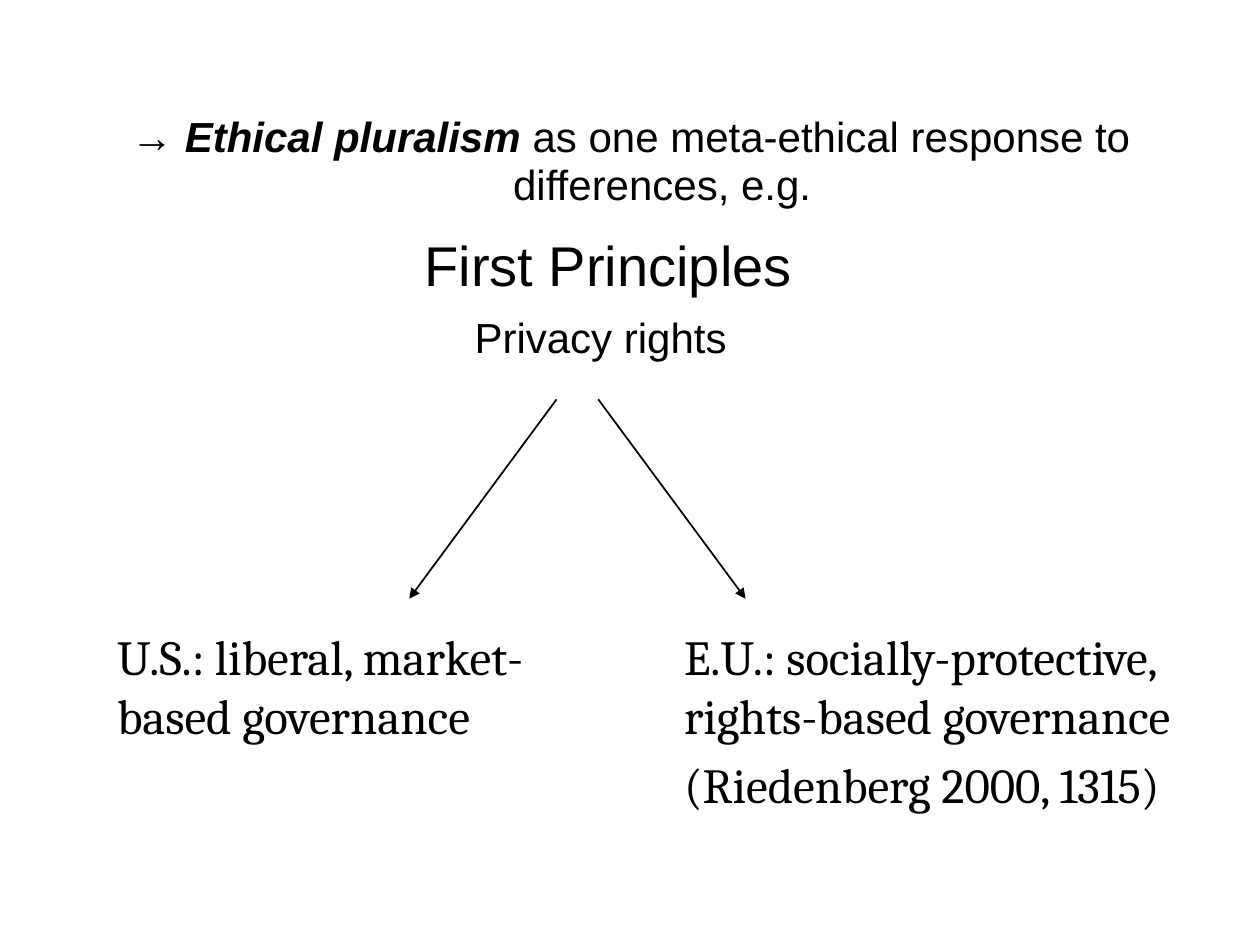
"""Build a slide on ethical pluralism and privacy rights."""
import pptx
import pptx.dml.color
import pptx.enum.dml
import pptx.enum.shapes
import pptx.enum.text
import pptx.oxml
import pptx.oxml.ns
import pptx.util

Cm, Pt = pptx.util.Cm, pptx.util.Pt
KIND = pptx.enum.shapes
ALIGN = pptx.enum.text.PP_ALIGN
HUES = {"ink": "000000", "edge": "FFFFFF"}

HEAD = {"name": "Arial", "size": Pt(24)}
BIG = {"name": "Arial", "size": Pt(32)}
BODY = {"name": "Cambria", "size": Pt(28)}
MID = {"alignment": ALIGN.CENTER}
LEFT = {"alignment": ALIGN.LEFT}
NEXT = {**LEFT, "space_before": Pt(6)}

BOXES = [
    {"at": (6.45, 4.52, 11.63, 3), "edge": False, "hang": (0, 0), "paras": [
        (MID, [("First Principles", BIG), ("\n", BIG),
               ("Privacy rights", HEAD), (" ", BIG)])]},
    {"at": (12.27, 12.5, 12.07, 5.16), "edge": True, "hang": (1.27, 0), "paras": [
        (LEFT, [("E.U.: socially-protective, rights-based governance", BODY)]),
        (NEXT, [("(Riedenberg 2000, 1315)", BODY)])]},
    {"at": (0.84, 12.5, 10.8, 2.72), "edge": True, "hang": (1.27, 0), "paras": [
        (LEFT, [("U.S.: liberal, market-based governance", BODY)])]},
    {"at": (1.07, 2.18, 23.29, 2.21), "edge": False, "hang": (1.27, -1.27), "paras": [
        ({**MID, "line_spacing": 0.95}, [
            ("→ ", {**HEAD, "bold": True}),
            ("Ethical pluralism ", {**HEAD, "bold": True, "italic": True}),
            ("as one meta-ethical response to differences, e.g.", HEAD)])]},
]
AXIS, TOP, LOW = 11.64, 8.05, 12.07
NEAR, FAR = 0.42, 3.39


def tint(name):
    return pptx.dml.color.RGBColor.from_string(HUES[name])


def apply(goal, vals):
    for key, val in vals.items():
        setattr(goal, key, val)


def write(frame, paras, hang):
    apply(frame, {"word_wrap": True,
                  "auto_size": pptx.enum.text.MSO_AUTO_SIZE.SHAPE_TO_FIT_TEXT,
                  "vertical_anchor": pptx.enum.text.MSO_ANCHOR.TOP})
    for num, (form, runs) in enumerate(paras):
        para = frame.add_paragraph() if num else frame.paragraphs[0]
        prop = para._p.get_or_add_pPr()
        for key, val in zip(("marL", "indent"), hang):
            prop.set(key, str(int(Cm(val))))
        apply(para, form)
        for text, font in runs:
            if text == "\n":
                para.add_line_break()
                continue
            run = para.add_run()
            run.text = text
            apply(run.font, font)
            run.font.color.rgb = tint("ink")


def block(slide, at, edge, hang, paras):
    spot = [Cm(val) for val in at]
    if edge:
        shape = slide.shapes.add_shape(KIND.MSO_SHAPE.RECTANGLE, *spot)
        shape.shadow.inherit = False
        shape.fill.background()
        shape.line.color.rgb = tint("edge")
        shape.line.width = Pt(2.25)
    else:
        shape = slide.shapes.add_textbox(*spot)
    write(shape.text_frame, paras, hang)


def arrow(slide, side):
    ends = (AXIS + side * NEAR, TOP, AXIS + side * FAR, LOW)
    link = slide.shapes.add_connector(KIND.MSO_CONNECTOR.STRAIGHT,
                                      *[Cm(val) for val in ends])
    link.line.color.rgb = tint("ink")
    link.line.width = Pt(1)
    tip = pptx.oxml.parse_xml(
        f'<a:tailEnd {pptx.oxml.ns.nsdecls("a")} type="triangle"/>')
    link.line._get_or_add_ln().append(tip)
    flat = pptx.oxml.parse_xml(f'<a:effectLst {pptx.oxml.ns.nsdecls("a")}/>')
    link._element.spPr.append(flat)


def main():
    deck = pptx.Presentation()
    deck.slide_width, deck.slide_height = Cm(25.4), Cm(19.05)
    slide = deck.slides.add_slide(deck.slide_layouts[6])
    for box in BOXES:
        block(slide, **box)
    for side in (-1, 1):
        arrow(slide, side)
    deck.save("out.pptx")


if __name__ == "__main__":
    main()
